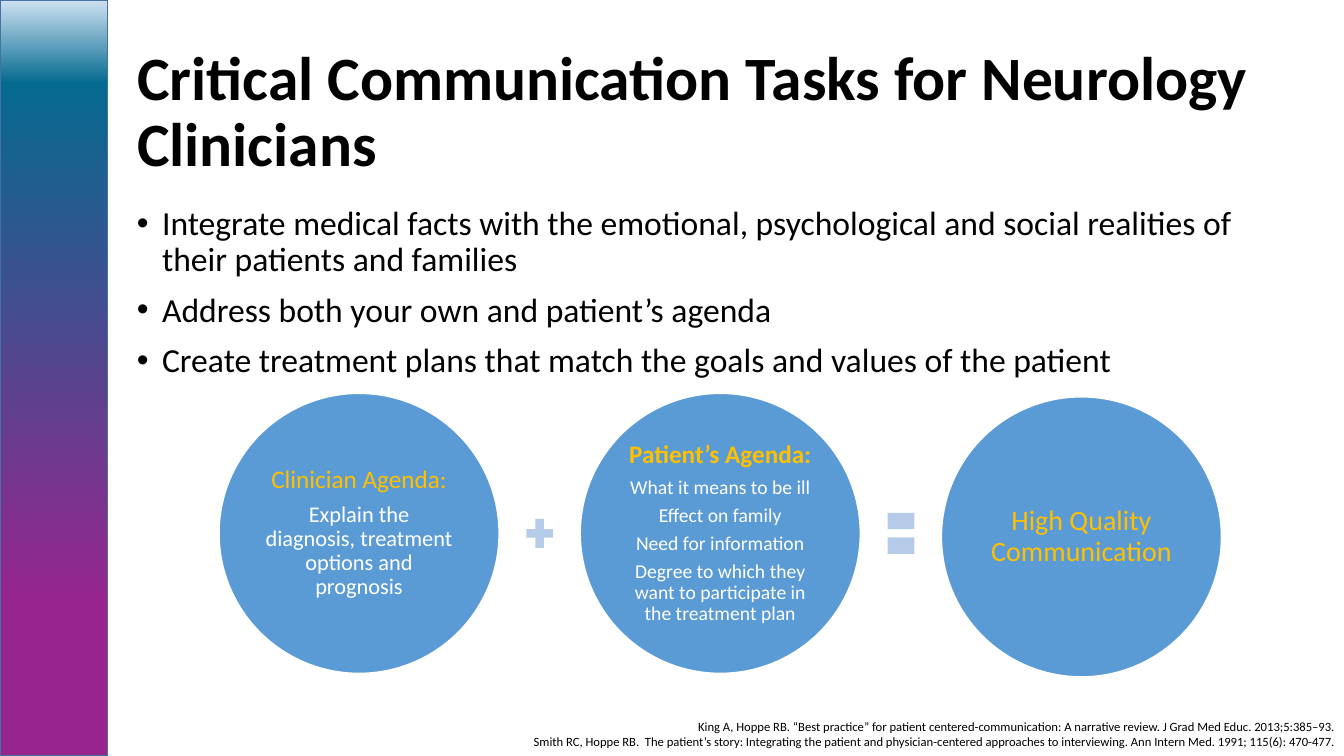
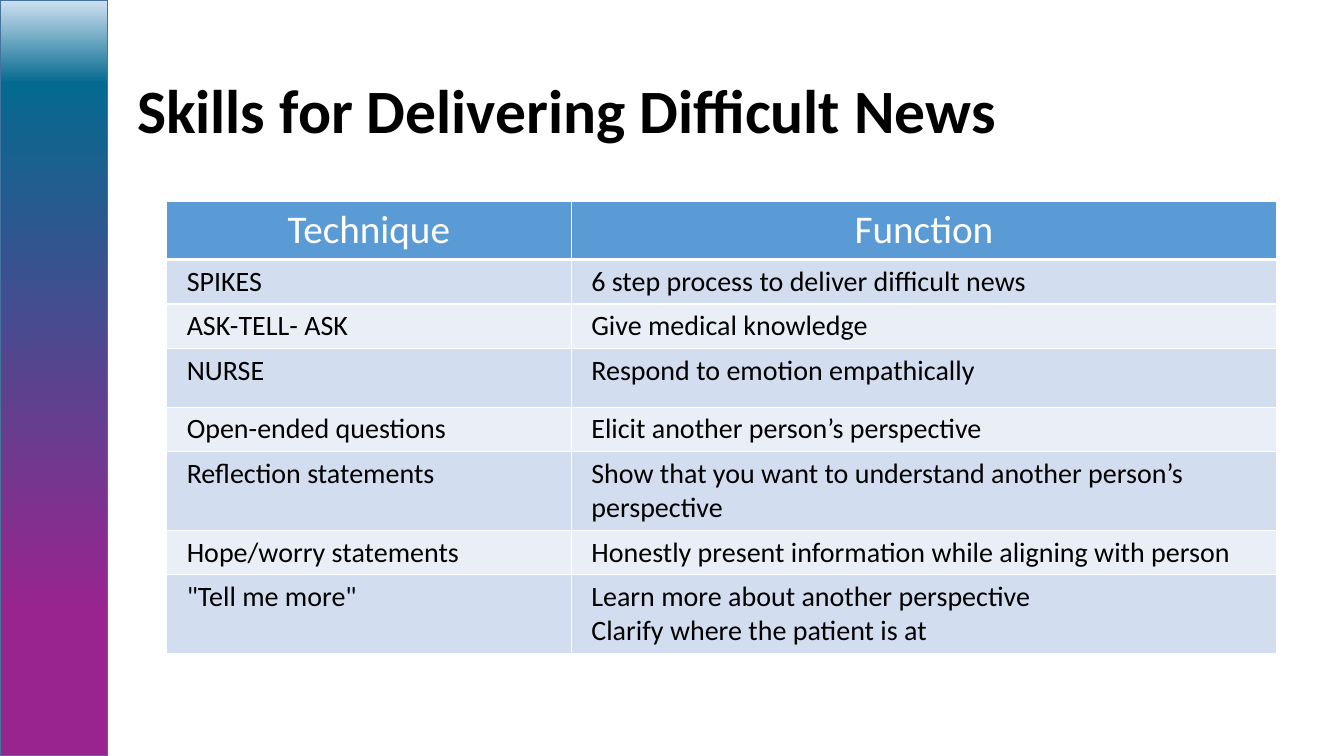
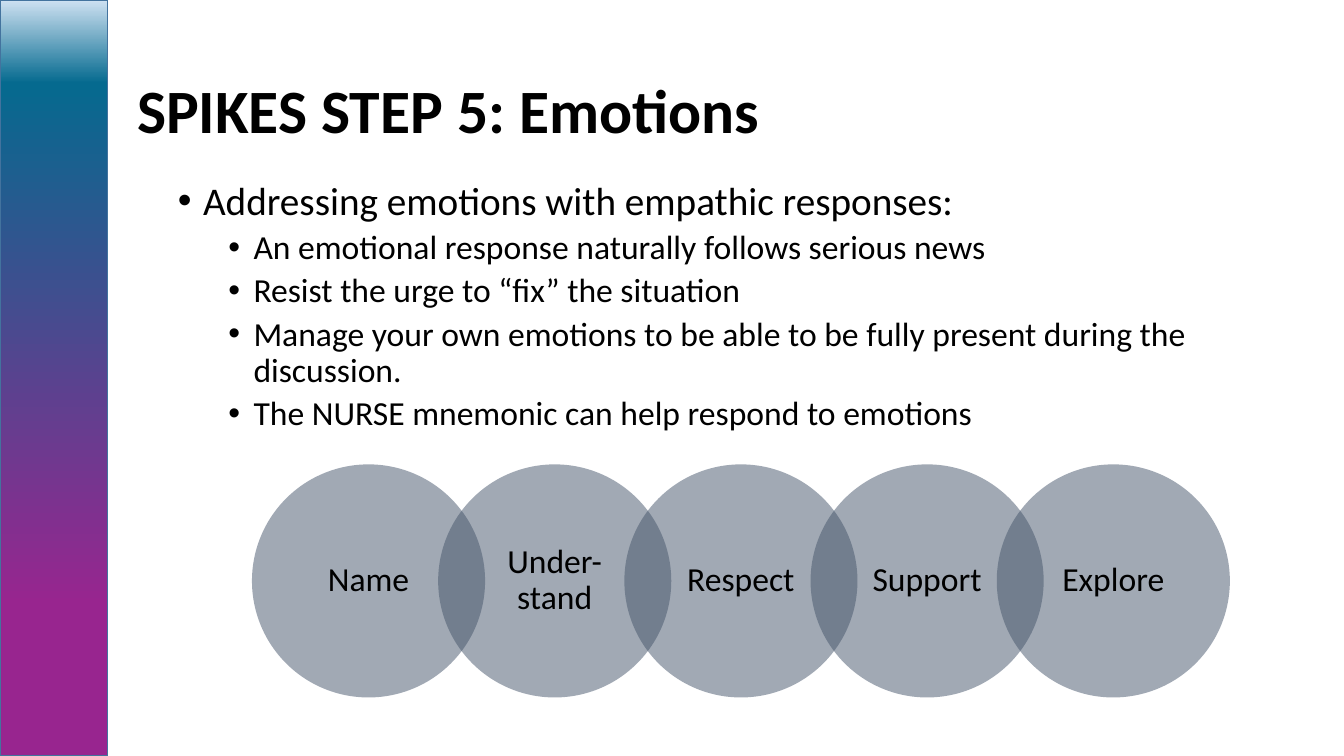
from copy import deepcopy

from pptx import Presentation
from pptx.dml.color import RGBColor
from pptx.enum import shapes, text
from pptx.oxml.ns import qn
from pptx.util import Pt
from lxml import etree

FONT = "Calibri"
BLACK = RGBColor(0x00, 0x00, 0x00)
WHITE = RGBColor(0xFF, 0xFF, 0xFF)
GOLD = RGBColor(0xFF, 0xC0, 0x00)
BLUE = RGBColor(0x5B, 0x9B, 0xD5)
PALE = RGBColor(0xB5, 0xCB, 0xE7)
SLATE = RGBColor(0x44, 0x54, 0x6A)
EDGE = RGBColor(0x43, 0x73, 0x9E)
STRIPES = (RGBColor(0xD2, 0xDE, 0xEF), RGBColor(0xEA, 0xEF, 0xF7))
RAMP = (
    (0.20, RGBColor(0x98, 0x25, 0x8F)),
    (0.89, RGBColor(0x05, 0x6A, 0x8F)),
    (1.00, RGBColor(0xCE, 0xE1, 0xF2)),
)

WIDTH, HEIGHT = 960, 540
SHAPE = shapes.MSO_SHAPE
LEFT, CENTER, RIGHT = text.PP_ALIGN.LEFT, text.PP_ALIGN.CENTER, text.PP_ALIGN.RIGHT
MIDDLE = text.MSO_ANCHOR.MIDDLE


def place(box):
    return [Pt(n) for n in box]


def style(para, size, color=BLACK, bold=False, align=LEFT, tight=True):
    para.alignment = align
    if tight:
        para.line_spacing = 0.9
    font = para.font
    font.name, font.size, font.bold = FONT, Pt(size), bold
    font.color.rgb = color


def fill_lines(frame, lines):
    """Yield a paragraph for each line of text."""
    for i, line in enumerate(lines):
        para = frame.add_paragraph() if i else frame.paragraphs[0]
        para.text = line
        yield para


def add_shape(slide, kind, box, fill, line=None):
    shape = slide.shapes.add_shape(kind, *place(box))
    shape.shadow.inherit = False
    shape.fill.solid()
    shape.fill.fore_color.rgb = fill
    if line is None:
        shape.line.fill.background()
    else:
        shape.line.color.rgb = line
        shape.line.width = Pt(1)
    return shape


def add_disc(slide, box, lines, fill, line=None, side=2):
    """Draw a circle; each line is (text, size, colour, bold)."""
    disc = add_shape(slide, SHAPE.OVAL, box, fill, line)
    frame = disc.text_frame
    frame.word_wrap = True
    frame.vertical_anchor = MIDDLE
    frame.margin_left = frame.margin_right = Pt(side)
    frame.margin_top = frame.margin_bottom = Pt(2)
    paras = fill_lines(frame, [row[0] for row in lines])
    for para, (_, size, color, bold) in zip(paras, lines):
        style(para, size, color, bold, CENTER)
        para.space_after = Pt(round(0.35 * size, 1))
    return disc


def add_band(slide, layout):
    """Draw the side band and hand it to the layout."""
    band = add_shape(slide, SHAPE.RECTANGLE, (0, 0, 77, HEIGHT), BLUE, EDGE)
    band.fill.gradient()
    band.fill.gradient_angle = 90
    stops = band.element.find(".//" + qn("a:gsLst"))
    stops.append(deepcopy(stops[0]))
    for stop, (spot, color) in zip(band.fill.gradient_stops, RAMP):
        stop.position = spot
        stop.color.rgb = color
    layout.shapes.element.insert(2, band.element)


def add_slide(deck, layout, title):
    slide = deck.slides.add_slide(layout)
    head = slide.shapes.title
    head.left, head.top, head.width, head.height = place((90.7, 29, 838, 104.5))
    frame = head.text_frame
    frame.text = title
    frame.auto_size = text.MSO_AUTO_SIZE.NONE
    frame.vertical_anchor = MIDDLE
    style(frame.paragraphs[0], 44, bold=True)
    return slide


def add_list(slide, box, items):
    """Write bullets; each item is (level, size, text)."""
    frame = slide.shapes.add_textbox(*place(box)).text_frame
    frame.word_wrap = True
    paras = fill_lines(frame, [item[2] for item in items])
    for i, (para, (level, size, _)) in enumerate(zip(paras, items)):
        para.level = level
        props = para._p.get_or_add_pPr()
        props.set("marL", str(Pt(18 + 36 * level)))
        props.set("indent", str(Pt(-18)))
        etree.SubElement(props, qn("a:buFont")).set("typeface", "Arial")
        etree.SubElement(props, qn("a:buChar")).set("char", "•")
        if i:
            para.space_before = Pt(5 if level else 10)
        style(para, size)


def add_sum(slide, box, discs, signs):
    """Set discs in a row with a sign in the middle of each gap."""
    left, top, width, size = box
    step = (width - size) / (len(discs) - 1)
    for i, (drop, lines) in enumerate(discs):
        add_disc(slide, (left + i * step, top + drop, size, size), lines, BLUE, WHITE)
    for i, (kind, wide, high) in enumerate(signs):
        mid = left + i * step + (step + size) / 2
        spot = (mid - wide / 2, top + (size - high) / 2, wide, high)
        add_shape(slide, kind, spot, PALE)


def add_chain(slide, box, names):
    """Set clear discs in a row, each over the edge of the last."""
    left, top, width, size = box
    step = (width - size) / (len(names) - 1)
    for i, name in enumerate(names):
        spot = (left + i * step, top, size, size)
        disc = add_disc(slide, spot, [(name, 24, BLACK, False)], SLATE, side=9)
        tint = disc.element.spPr.find(qn("a:solidFill"))[0]
        etree.SubElement(tint, qn("a:alpha")).set("val", "50000")


def add_notes(slide, box, lines):
    frame = slide.shapes.add_textbox(*place(box)).text_frame
    frame.word_wrap = True
    for para in fill_lines(frame, lines):
        style(para, 9, align=RIGHT, tight=False)


def add_edges(cell, base):
    """Rule a cell in white, with its lower edge as wide as base."""
    props = cell._tc.get_or_add_tcPr()
    for i, (tag, wide) in enumerate((("L", 1), ("R", 1), ("T", 1), ("B", base))):
        edge = etree.Element(qn("a:ln" + tag), w=str(Pt(wide)))
        fill = etree.SubElement(edge, qn("a:solidFill"))
        etree.SubElement(fill, qn("a:srgbClr")).set("val", str(WHITE))
        props.insert(i, edge)


def add_grid(slide, spot, widths, rows):
    """Draw the table; each row is (height, cell, cell)."""
    box = (*spot, sum(widths), sum(row[0] for row in rows))
    grid = slide.shapes.add_table(len(rows), len(widths), *place(box)).table
    for col, width in zip(grid.columns, widths):
        col.width = Pt(width)
    for r, (height, *cells) in enumerate(rows):
        grid.rows[r].height = Pt(height)
        for c, words in enumerate(cells):
            cell = grid.cell(r, c)
            cell.margin_left = cell.margin_right = Pt(14.4)
            cell.fill.solid()
            cell.fill.fore_color.rgb = STRIPES[(r - 1) % 2] if r else BLUE
            add_edges(cell, 1 if r else 3)
            for para in fill_lines(cell.text_frame, words.split("\n")):
                if r:
                    style(para, 20, tight=False)
                else:
                    style(para, 28, WHITE, align=CENTER, tight=False)


def build_tasks(slide):
    add_list(slide, (90.7, 144, 839, 130), [
        (0, 24, "Integrate medical facts with the emotional, psychological and "
                "social realities of their patients and families"),
        (0, 24, "Address both your own and patient’s agenda"),
        (0, 24, "Create treatment plans that match the goals and values of the patient"),
    ])
    needs = (
        "What it means to be ill",
        "Effect on family",
        "Need for information",
        "Degree to which they want to participate in the treatment plan",
    )
    discs = [
        (0, [("Clinician Agenda:", 18, GOLD, False),
             ("Explain the diagnosis, treatment options and prognosis", 16, WHITE, False)]),
        (0, [("Patient’s Agenda:", 18, GOLD, True)]
            + [(need, 14, WHITE, False) for need in needs]),
        (2.5, [("High Quality Communication", 20, GOLD, False)]),
    ]
    signs = [(SHAPE.MATH_PLUS, 26, 28), (SHAPE.MATH_EQUAL, 26, 50)]
    add_sum(slide, (156.5, 281, 716, 200), discs, signs)
    add_notes(slide, (114, 510, 846, 29), [
        "King A, Hoppe RB. “Best practice” for patient centered-communication: "
        "A narrative review. J Grad Med Educ. 2013;5:385–93.",
        "Smith RC, Hoppe RB.  The patient’s story: Integrating the patient and "
        "physician-centered approaches to interviewing. "
        "Ann Intern Med. 1991; 115(6): 470-477.",
    ])


def build_skills(slide):
    add_grid(slide, (119, 144), (289, 504), [
        (41, "Technique", "Function"),
        (31.6, "SPIKES", "6 step process to deliver difficult news"),
        (31.6, "ASK-TELL- ASK", "Give medical knowledge"),
        (42, "NURSE", "Respond to emotion empathically"),
        (31.6, "Open-ended questions", "Elicit another person’s perspective"),
        (56, "Reflection statements",
         "Show that you want to understand another person’s perspective"),
        (31.6, "Hope/worry statements",
         "Honestly present information while aligning with person"),
        (56, '"Tell me more"',
         "Learn more about another perspective\nClarify where the patient is at"),
    ])


def build_step(slide):
    add_list(slide, (120, 126, 804, 190), [
        (0, 28, "Addressing emotions with empathic responses:"),
        (1, 24, "An emotional response naturally follows serious news"),
        (1, 24, "Resist the urge to “fix” the situation"),
        (1, 24, "Manage your own emotions to be able to be fully present "
                "during the discussion."),
        (1, 24, "The NURSE mnemonic can help respond to emotions"),
    ])
    names = ("Name", "Under-stand", "Respect", "Support", "Explore")
    add_chain(slide, (180, 331.7, 698.5, 166.5), names)


def main():
    deck = Presentation()
    deck.slide_width, deck.slide_height = Pt(WIDTH), Pt(HEIGHT)
    layout = deck.slide_layouts[5]
    pages = (
        ("Critical Communication Tasks for Neurology Clinicians", build_tasks),
        ("Skills for Delivering Difficult News", build_skills),
        ("SPIKES STEP 5: Emotions", build_step),
    )
    for i, (title, build) in enumerate(pages):
        slide = add_slide(deck, layout, title)
        if i == 0:
            add_band(slide, layout)
        build(slide)
    deck.save("out.pptx")


if __name__ == "__main__":
    main()
